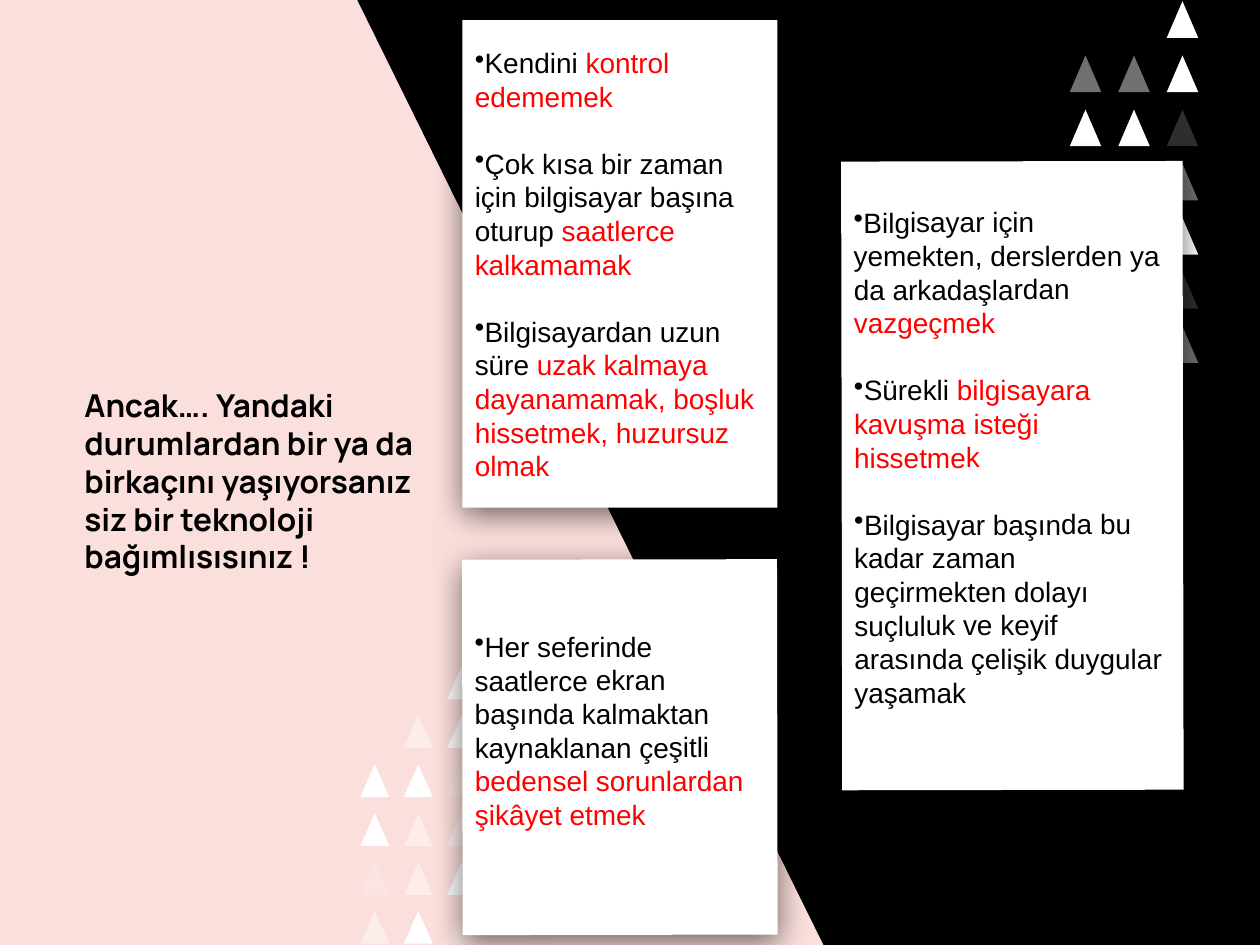
from lxml import etree
from pptx import Presentation, util as u
from pptx.dml.color import RGBColor
from pptx.enum import shapes, text
from pptx.oxml.ns import qn

BLACK, WHITE, RED, PINK = "000000", "FFFFFF", "FF0000", "FBDFDC"

TITLE = "Ancak…. Yandaki durumlardan bir ya da birkaçını yaşıyorsanız siz bir teknoloji bağımlısısınız !"

# Each bullet is a pair: plain wording, then the red emphasis
CARDS = [
    {"box": (3.67, 0.16, 2.5, 3.87), "rotation": 0, "bottom": 0.1, "bullets": [
        ("Kendini ", "kontrol edememek"),
        ("Çok kısa bir zaman için bilgisayar başına oturup ", "saatlerce kalkamamak"),
        ("Bilgisayardan uzun süre ",
         "uzak kalmaya dayanamamak, boşluk hissetmek, huzursuz olmak")]},
    {"box": (3.67, 4.44, 2.5, 2.98), "rotation": -0.1, "bottom": 0.32, "bullets": [
        ("Her seferinde saatlerce ekran başında kalmaktan kaynaklanan çeşitli ",
         "bedensel sorunlardan şikâyet etmek")]},
    {"box": (6.68, 1.28, 2.71, 4.99), "rotation": -0.1, "bottom": 0.35, "bullets": [
        ("Bilgisayar için yemekten, derslerden ya da arkadaşlardan ", "vazgeçmek"),
        ("Sürekli ", "bilgisayara kavuşma isteği hissetmek"),
        ("Bilgisayar başında bu kadar zaman geçirmekten dolayı suçluluk ve keyif "
         "arasında çelişik duygular yaşamak", "")]},
]

# Triangle grids, one string per column from top to bottom; "." is an empty cell
OPACITY = {"#": 100, "+": 44, "-": 18}
TRIANGLE_GRIDS = [
    {"origin": (8.49, 0.01), "pitch": (0.385, 0.43), "size": (0.25, 0.29),
     "columns": [".+##-+#-+", ".+#++#++", "##-+#-+"]},
    {"origin": (2.86, 5.29), "pitch": (0.345, 0.388), "size": (0.23, 0.26),
     "columns": ["..##-+", ".+#++#", "##-+#-"]},
]


def color(value):
    return RGBColor.from_string(value)


def paint(shape, fill, opacity=100):
    shape.shadow.inherit = False
    shape.fill.solid()
    shape.fill.fore_color.rgb = color(fill)
    shape.line.fill.background()
    if opacity < 100:
        tone = shape.fill._xPr.find(qn("a:solidFill"))[0]
        etree.SubElement(tone, qn("a:alpha"), val=str(opacity * 1000))


def add_shadow(shape, blur=18, distance=4, direction=90, opacity=55):
    effects = shape._element.spPr.find(qn("a:effectLst"))
    shadow = etree.SubElement(effects, qn("a:outerShdw"), blurRad=str(u.Pt(blur)),
                              dist=str(u.Pt(distance)), dir=str(direction * 60000),
                              algn="ctr", rotWithShape="0")
    tone = etree.SubElement(shadow, qn("a:srgbClr"), val=BLACK)
    etree.SubElement(tone, qn("a:alpha"), val=str(opacity * 1000))


def set_frame(frame, vertical=0.1, bottom=0.1):
    frame.word_wrap = True
    frame.auto_size = text.MSO_AUTO_SIZE.NONE
    frame.vertical_anchor = text.MSO_ANCHOR.MIDDLE
    frame.margin_left = frame.margin_right = u.Inches(0.1)
    frame.margin_top, frame.margin_bottom = u.Inches(vertical), u.Inches(bottom)


def write(paragraph, runs, size, font, bold=False, bullet=None, before=0):
    paragraph.alignment = text.PP_ALIGN.LEFT
    paragraph.line_spacing = u.Pt(size * 1.2)
    paragraph.space_before = u.Pt(before)
    if bullet:
        properties = paragraph._p.get_or_add_pPr()
        properties.set("marL", "0")
        properties.set("indent", "0")
        etree.SubElement(properties, qn("a:buChar"), char=bullet)
    for words, tone in runs:
        if words:
            run = paragraph.add_run()
            run.text = words
            run.font.size, run.font.name, run.font.bold = u.Pt(size), font, bold
            run.font.color.rgb = color(tone)


def add_triangles(slide, origin, pitch, size, columns):
    group = slide.shapes.add_group_shape()
    for column, marks in enumerate(columns):
        for row, mark in enumerate(marks):
            if mark in OPACITY:
                left = origin[0] + column * pitch[0]
                top = origin[1] + row * pitch[1]
                triangle = group.shapes.add_shape(
                    shapes.MSO_SHAPE.ISOSCELES_TRIANGLE,
                    *map(u.Inches, (left, top, *size)))
                paint(triangle, WHITE, OPACITY[mark])


def add_card(slide, box, rotation, bottom, bullets):
    card = slide.shapes.add_shape(shapes.MSO_SHAPE.RECTANGLE, *map(u.Inches, box))
    card.rotation = rotation
    paint(card, WHITE)
    add_shadow(card)
    frame = card.text_frame
    set_frame(frame, vertical=0.1 if not rotation else 0.05, bottom=bottom)
    for index, (plain, emphasis) in enumerate(bullets):
        paragraph = frame.add_paragraph() if index else frame.paragraphs[0]
        write(paragraph, [(plain, BLACK), (emphasis, RED)], 16, "Arial",
              bullet="•", before=19.2 if index else 0)


def main():
    presentation = Presentation()
    presentation.slide_width, presentation.slide_height = u.Inches(10), u.Inches(7.5)
    slide = presentation.slides.add_slide(presentation.slide_layouts[5])
    slide.background.fill.solid()
    slide.background.fill.fore_color.rgb = color(BLACK)

    # Slanted pink panel
    builder = slide.shapes.build_freeform(0, u.Inches(-0.01))
    corners = [(0, 7.51), (6.54, 7.51), (2.83, -0.01)]
    builder.add_line_segments([(u.Inches(x), u.Inches(y)) for x, y in corners], close=True)
    paint(builder.convert_to_shape(), PINK)

    # Triangle patterns, then the cards over them
    for grid in TRIANGLE_GRIDS:
        add_triangles(slide, **grid)
    for card in CARDS:
        add_card(slide, **card)

    # Title on the panel
    title = slide.shapes.title
    title.left, title.top, title.width, title.height = map(u.Inches, (0.57, 2.63, 2.86, 2.37))
    set_frame(title.text_frame)
    write(title.text_frame.paragraphs[0], [(TITLE, BLACK)], 18, "Manrope", bold=True)
    slide.shapes._spTree.append(title._element)

    presentation.save("out.pptx")


if __name__ == "__main__":
    main()
